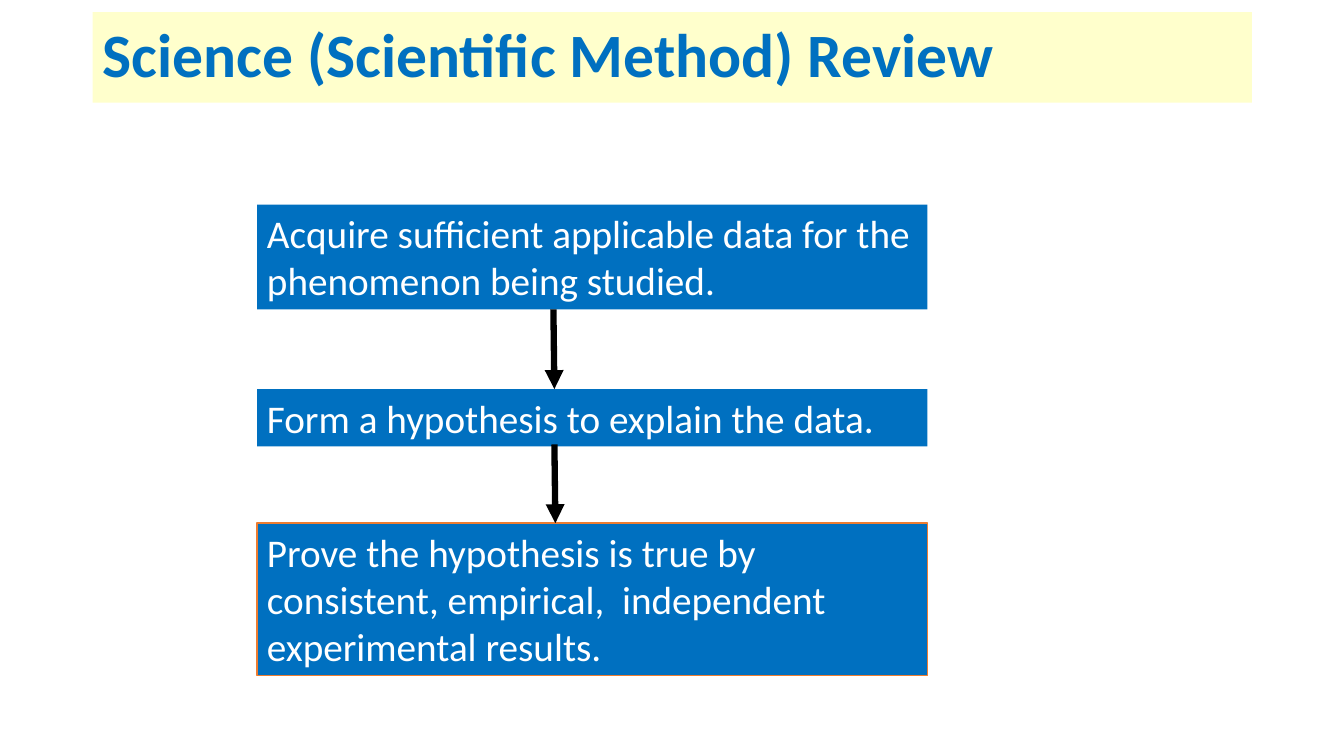
from dataclasses import dataclass

import pptx
import pptx.dml.color
import pptx.enum.shapes
import pptx.enum.text
import pptx.oxml.ns
import pptx.util
from lxml import etree

Pt = pptx.util.Pt
BLUE, WHITE, CREAM = "0070C0", "FFFFFF", "FFFFCC"
BLACK, ORANGE = "000000", "ED7D31"
LEFT, WIDTH = 183.6, 478.8


@dataclass
class Step:
    top: float
    height: float
    text: str
    edge: str = ""


@dataclass
class Arrow:
    x1: float
    y1: float
    x2: float
    y2: float


STEPS = [
    Step(146.2, 74.9, "Acquire sufficient applicable data for the phenomenon being studied."),
    Step(277.9, 41, "Form a hypothesis to explain the data."),
    Step(373.7, 108.7, "Prove the hypothesis is true by consistent, empirical,  "
         "independent experimental results.", ORANGE),
]
ARROWS = [Arrow(395.3, 221, 396, 277.9), Arrow(396, 317.5, 396.7, 373.7)]


def paint(fill, color: str) -> None:
    """Give a fill one solid colour."""
    fill.solid()
    fill.fore_color.rgb = pptx.dml.color.RGBColor.from_string(color)


def write(shape, text: str, size: float, color: str, bold: bool = False) -> None:
    """Put one left-aligned paragraph in a shape."""
    frame = shape.text_frame
    frame.word_wrap = True
    frame.text = text
    para = frame.paragraphs[0]
    para.alignment = pptx.enum.text.PP_ALIGN.LEFT
    para.font.name = "Calibri"
    para.font.size = Pt(size)
    para.font.bold = bold
    paint(para.font.fill, color)


def add_title(slide) -> None:
    title = slide.shapes.title
    title.left, title.top = Pt(66.2), Pt(8.6)
    title.width, title.height = Pt(828), Pt(64.8)
    paint(title.fill, CREAM)
    write(title, "Science (Scientific Method) Review", 44, BLUE, True)
    frame = title.text_frame
    frame.auto_size = pptx.enum.text.MSO_AUTO_SIZE.NONE
    frame.vertical_anchor = pptx.enum.text.MSO_ANCHOR.MIDDLE
    frame.paragraphs[0].line_spacing = 0.9


def add_step(slide, step: Step) -> None:
    box = slide.shapes.add_shape(
        pptx.enum.shapes.MSO_SHAPE.RECTANGLE,
        Pt(LEFT), Pt(step.top), Pt(WIDTH), Pt(step.height))
    box.shadow.inherit = False
    paint(box.fill, BLUE)
    if step.edge:
        paint(box.line.fill, step.edge)
        box.line.width = Pt(1)
    else:
        box.line.fill.background()
    write(box, step.text, 28, WHITE)
    box.text_frame.vertical_anchor = pptx.enum.text.MSO_ANCHOR.TOP
    box.text_frame.auto_size = pptx.enum.text.MSO_AUTO_SIZE.SHAPE_TO_FIT_TEXT


def add_arrow(slide, arrow: Arrow) -> None:
    link = slide.shapes.add_connector(
        pptx.enum.shapes.MSO_CONNECTOR.STRAIGHT,
        Pt(arrow.x1), Pt(arrow.y1), Pt(arrow.x2), Pt(arrow.y2))
    paint(link.line.fill, BLACK)
    link.line.width = Pt(4.5)
    qn = pptx.oxml.ns.qn
    etree.SubElement(link.line._get_or_add_ln(), qn("a:tailEnd"), type="triangle")
    etree.SubElement(link._element.spPr, qn("a:effectLst"))


def main() -> None:
    deck = pptx.Presentation()
    deck.slide_width, deck.slide_height = Pt(960), Pt(540)
    slide = deck.slides.add_slide(deck.slide_layouts.get_by_name("Title Only"))
    add_title(slide)
    for step in STEPS:
        add_step(slide, step)
    for arrow in ARROWS:
        add_arrow(slide, arrow)
    deck.save("out.pptx")


if __name__ == "__main__":
    main()
